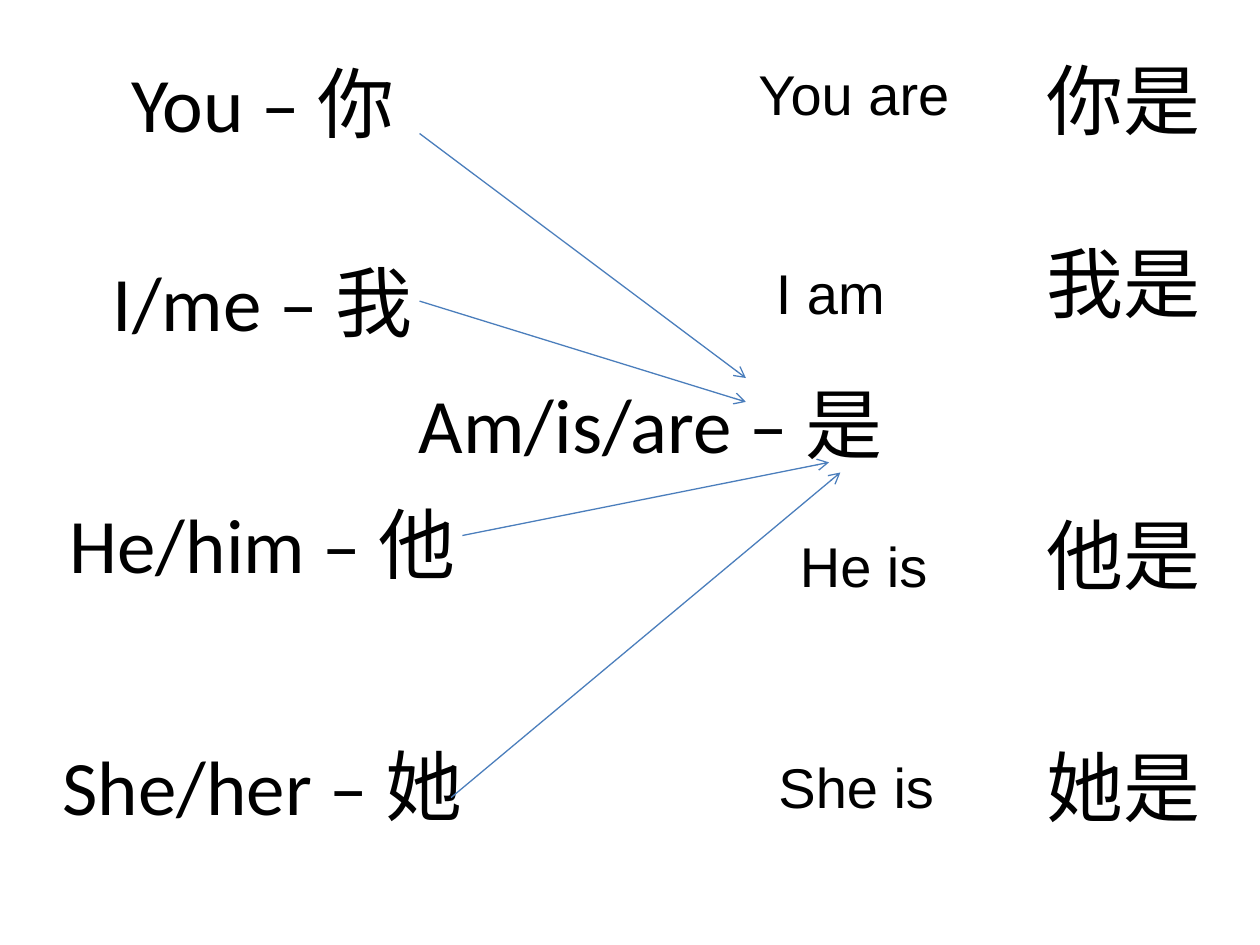
import pptx
import pptx.dml.color
import pptx.enum.shapes
import pptx.enum.text
import pptx.util
from lxml import etree
from pptx.oxml.ns import qn

Inches = pptx.util.Inches
ALIGN = pptx.enum.text.PP_ALIGN
ANCHOR = pptx.enum.text.MSO_ANCHOR
COLORS = {"text": "000000", "arrow": "4B7EBC", "background": "FFFFFF"}
COLUMN_WIDTH, ROW_HEIGHT = 4.17, 1.61

# Text, left, top, height
WORDS = [
    ("I/me – 我", 0, 1.58, ROW_HEIGHT),
    ("He/him – 他", 0, 3.5, ROW_HEIGHT),
    ("She/her – 她", 0, 5.42, ROW_HEIGHT),
    ("Am/is/are – 是", 3.08, 2.55, ROW_HEIGHT),
    ("你是", 6.83, -0.02, ROW_HEIGHT),
    ("我是", 6.83, 1.43, ROW_HEIGHT),
    ("他是", 6.83, 3.83, 1.13),
    ("她是", 6.83, 5.67, 1.13),
]
# Text, left, top
TRANSLATIONS = [
    ("You are", 5.92, 0.42),
    ("I am", 6.06, 2),
    ("He is", 6.25, 4.17),
    ("She is", 6.08, 5.92),
]
# Start and end of each arrow from a pronoun to the verb
ARROWS = [
    ((3.33, 1.06), (5.92, 3)),
    ((3.33, 2.39), (5.92, 3.19)),
    ((3.67, 4.25), (6.58, 3.67)),
    ((3.58, 6.33), (6.67, 3.75)),
]


def color(name):
    return pptx.dml.color.RGBColor.from_string(COLORS[name])


def write(frame, text, size, font, align, anchor):
    frame.word_wrap = True
    frame.auto_size = pptx.enum.text.MSO_AUTO_SIZE.NONE
    frame.vertical_anchor = anchor
    paragraph = frame.paragraphs[0]
    paragraph.alignment = align
    run = paragraph.add_run()
    run.text = text
    run.font.size = pptx.util.Pt(size)
    run.font.name = font
    run.font.color.rgb = color("text")


def write_word(frame, text):
    write(frame, text, 44, "Calibri", ALIGN.CENTER, ANCHOR.MIDDLE)


def add_title(slide, text):
    title = slide.shapes.title
    title.left, title.top = Inches(0), Inches(0)
    title.width, title.height = Inches(COLUMN_WIDTH), Inches(ROW_HEIGHT)
    write_word(title.text_frame, text)


def add_word(slide, text, left, top, height):
    word = slide.shapes.add_textbox(
        Inches(left), Inches(top), Inches(COLUMN_WIDTH), Inches(height))
    write_word(word.text_frame, text)


def add_translation(slide, text, left, top):
    translation = slide.shapes.add_textbox(
        Inches(left), Inches(top), Inches(3.08), Inches(0.64))
    write(translation.text_frame, text, 32, "Arial", ALIGN.LEFT, ANCHOR.TOP)


def add_arrow(slide, start, end):
    arrow = slide.shapes.add_connector(
        pptx.enum.shapes.MSO_CONNECTOR.STRAIGHT,
        *(Inches(value) for value in start + end))
    arrow.line.color.rgb = color("arrow")
    arrow.line.width = pptx.util.Pt(0.75)
    etree.SubElement(arrow.line._get_or_add_ln(), qn("a:tailEnd"), type="arrow")
    etree.SubElement(arrow._element.spPr, qn("a:effectLst"))


def main():
    deck = pptx.Presentation()
    deck.slide_width, deck.slide_height = Inches(10), Inches(7.5)
    slide = deck.slides.add_slide(deck.slide_layouts[0])
    slide.background.fill.solid()
    slide.background.fill.fore_color.rgb = color("background")

    # The subtitle is not needed
    subtitle = slide.placeholders[1]._element
    subtitle.getparent().remove(subtitle)

    # Pronouns, verb and their combinations
    add_title(slide, "You – 你")
    for word in WORDS:
        add_word(slide, *word)
    for translation in TRANSLATIONS:
        add_translation(slide, *translation)

    # Arrows to the verb
    for start, end in ARROWS:
        add_arrow(slide, start, end)

    deck.save("out.pptx")


if __name__ == "__main__":
    main()
